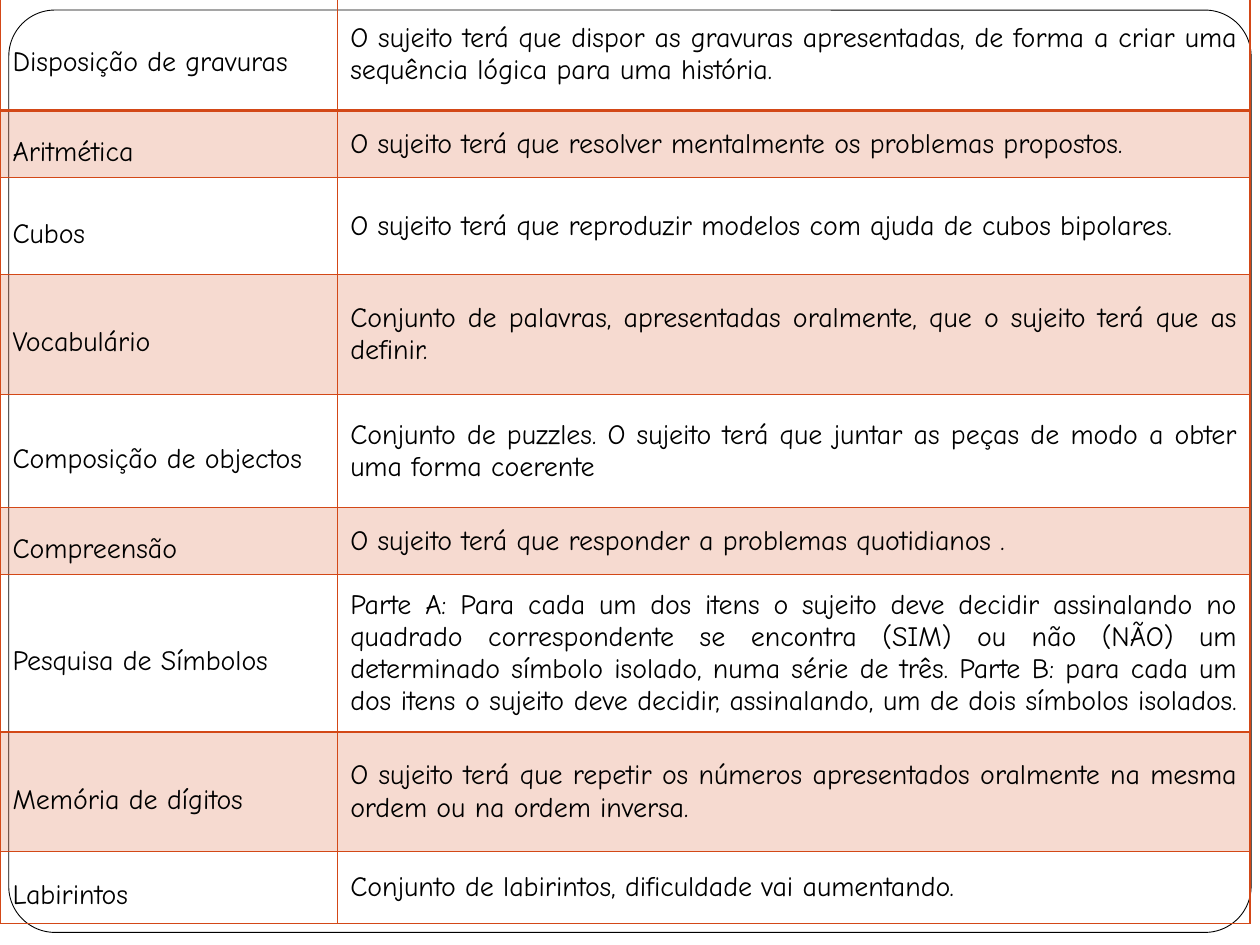
from lxml.etree import SubElement
from pptx import Presentation
from pptx.dml.color import RGBColor
from pptx.enum.shapes import MSO_SHAPE
from pptx.enum.text import MSO_ANCHOR, PP_ALIGN
from pptx.oxml.ns import qn
from pptx.util import Inches, Pt

ACCENT, INK, PAPER = "D34817", "000000", "FFFFFF"
FONT = "Comic Neue"
COLUMNS = (2.68, 7.24)
SUBTESTS = [
    (0.9, "Disposição de gravuras",
     "O sujeito terá que dispor as gravuras apresentadas, de forma a criar uma "
     "sequência lógica para uma história."),
    (0.53, "Aritmética", "O sujeito terá que resolver mentalmente os problemas propostos. "),
    (0.77, "Cubos", "O sujeito terá que reproduzir modelos com ajuda de cubos bipolares."),
    (0.95, "Vocabulário",
     "Conjunto de palavras, apresentadas oralmente, que o sujeito terá que as definir."),
    (0.9, "Composição de objectos ",
     "Conjunto de puzzles. O sujeito terá que juntar as peças de modo a obter "
     "uma forma coerente"),
    (0.53, "Compreensão", "O sujeito terá que responder a problemas quotidianos . "),
    (1.25, "Pesquisa de Símbolos",
     "Parte A: Para cada um dos itens o sujeito deve decidir assinalando no quadrado "
     "correspondente se encontra (SIM) ou não (NÃO) um determinado símbolo isolado, "
     "numa série de três. Parte B: para cada um dos itens o sujeito deve decidir, "
     "assinalando, um de dois símbolos isolados. "),
    (0.95, "Memória de dígitos ",
     "O sujeito terá que repetir os números apresentados oralmente na mesma ordem "
     "ou na ordem inversa. "),
    (0.57, "Labirintos ", "Conjunto de labirintos, dificuldade vai aumentando."),
]


def color(value):
    return RGBColor.from_string(value)


def write(cell, text, size=16, ink=INK, spacing=None):
    cell.vertical_anchor = MSO_ANCHOR.MIDDLE
    paragraph = cell.text_frame.paragraphs[0]
    paragraph.alignment = PP_ALIGN.JUSTIFY
    paragraph.line_spacing = spacing
    run = paragraph.add_run()
    run.text = text
    run.font.name, run.font.size = FONT, Pt(size)
    run.font.color.rgb = color(ink)


def add_borders(cell, **widths):
    properties = cell._tc.get_or_add_tcPr()
    for position, side in enumerate("LRTB"):
        line = properties.makeelement(qn(f"a:ln{side}"), {"w": str(Pt(widths.get(side, 1)))})
        SubElement(SubElement(line, qn("a:solidFill")), qn("a:srgbClr"), val=ACCENT)
        properties.insert(position, line)


def tint(cell, value, opacity):
    cell.fill.solid()
    cell.fill.fore_color.rgb = color(value)
    shade = cell._tc.tcPr.find(qn("a:solidFill")).find(qn("a:srgbClr"))
    SubElement(shade, qn("a:alpha"), val=str(opacity * 1000))


def add_frame(slide):
    frame = slide.shapes.add_shape(MSO_SHAPE.ROUNDED_RECTANGLE, Inches(0.07), Inches(0.08),
                                   Inches(9.86), Inches(7.32))
    frame.adjustments[0] = 0.05
    frame.shadow.inherit = False
    frame.fill.solid()
    frame.fill.fore_color.rgb = color(PAPER)
    frame.line.color.rgb = color(INK)
    frame.line.width = Pt(0.5)


def add_subtests(slide):
    height = sum(row[0] for row in SUBTESTS)
    table = slide.shapes.add_table(len(SUBTESTS), len(COLUMNS), 0, Inches(-0.02),
                                   Inches(sum(COLUMNS)), Inches(height)).table
    table.first_row = table.horz_banding = False
    for column, width in zip(table.columns, COLUMNS):
        column.width = Inches(width)
    for index, (row_height, name, task) in enumerate(SUBTESTS):
        table.rows[index].height = Inches(row_height)
        for column, (text, spacing) in enumerate(((name, 1.5), (task, None))):
            cell = table.cell(index, column)
            write(cell, text, spacing=spacing)
            if index % 2:
                tint(cell, ACCENT, 20)
            else:
                cell.fill.background()
            add_borders(cell, T=2 if index == 1 else 1, B=2 if index == 0 else 1)


def main():
    """Build the slide that lists the subtests and their tasks."""
    deck = Presentation()
    deck.slide_width, deck.slide_height = Inches(10), Inches(7.5)
    slide = deck.slides.add_slide(deck.slide_layouts[6])
    add_frame(slide)
    add_subtests(slide)
    deck.save("out.pptx")


if __name__ == "__main__":
    main()
